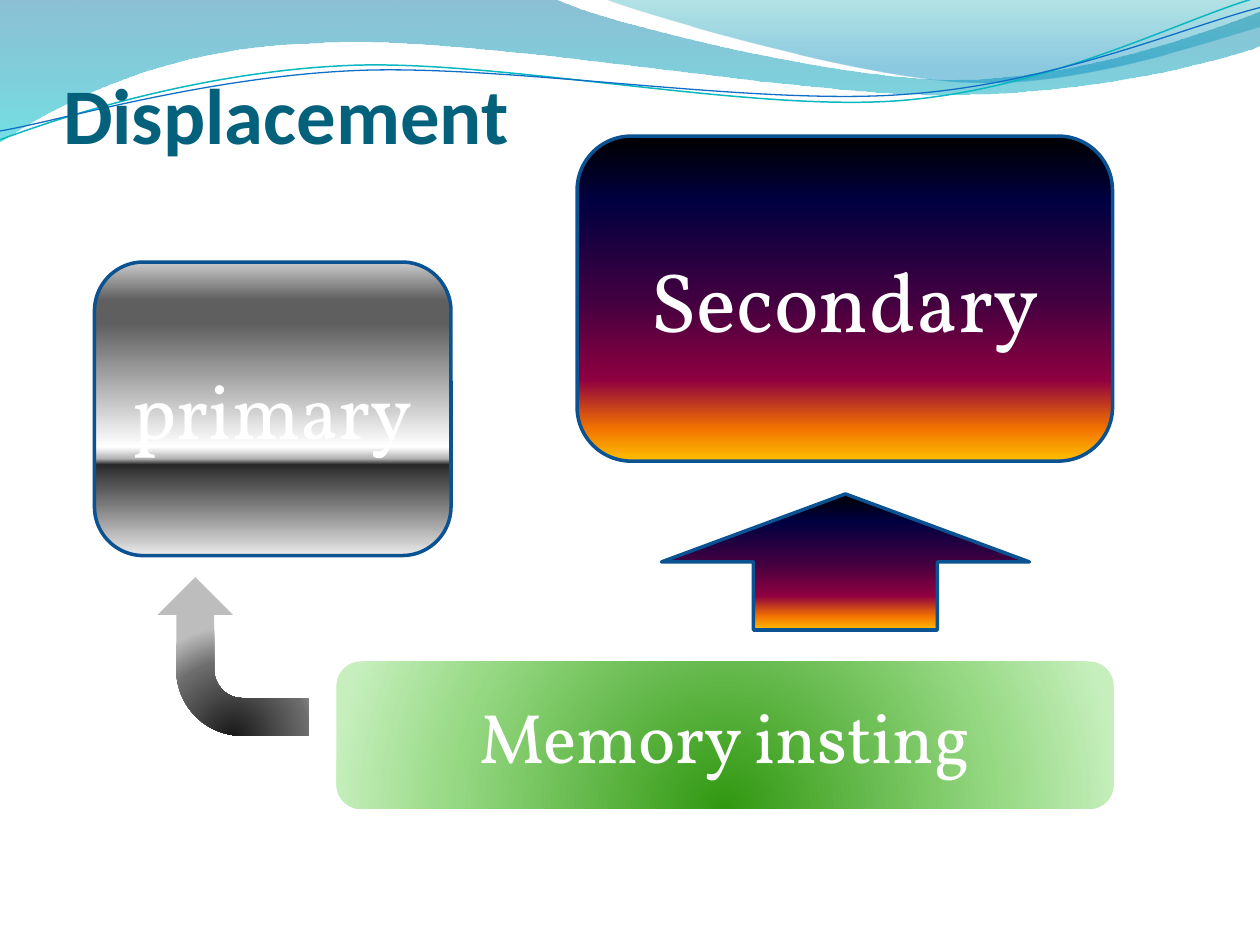
import pptx
import pptx.util
import pptx.dml.color
import pptx.enum.shapes
import pptx.enum.text
import pptx.oxml
from pptx.util import Inches, Pt

SHAPE = pptx.enum.shapes.MSO_SHAPE
NS = 'xmlns:a="http://schemas.openxmlformats.org/drawingml/2006/main"'

# Gradient stops: position %, colour, optional opacity %
FIRE = [(0, "000000"), (20, "000040"), (50, "400040"), (75, "8F0040"),
        (90, "F27300"), (100, "FFBF00")]
CHROME = [(0, "CBCBCB"), (13, "5F5F5F"), (21, "5F5F5F"), (63, "FFFFFF"),
          (67, "B2B2B2"), (69, "292929"), (82, "777777"), (100, "EAEAEA")]
GREEN = [(0, "319811"), (68, "95D882"), (100, "C6EFBD")]
GREY = [(0, "191919"), (68, "6C6C6C"), (100, "BDBDBD")]
BORDER = "0B5292"

# Two numbers are a straight segment, six are a Bézier curve
WAVES = [
    ([(0, 0), (4.4, -0.01), (4.76, 0.17, 6.64, 0.63, 7.58, 0.63),
      (8.53, 0.63, 9.58, 0.26, 10, 0.09), (10.01, 0.36),
      (9.83, 0.44, 8.7, 0.76, 7.46, 0.75), (6.22, 0.75, 3.82, 0.28, 2.57, 0.34),
      (1.29, 0.36, 0.46, 0.83, -0.01, 1.13)],
     [(0, "0074A1", 45), (100, "00C6CF", 55)]),
    ([(4.79, -0.01), (5.09, 0.11, 6.82, 0.62, 7.69, 0.65),
      (8.56, 0.69, 9.61, 0.32, 10, 0.21), (10, 0)],
     [(0, "00A1A9", 30), (80, "008BBF", 45)]),
]
STRANDS = [
    ([(0, 1.11), (0.48, 0.93, 1.58, 0.57, 2.77, 0.52),
      (3.95, 0.47, 5.93, 0.89, 7.13, 0.8), (8.33, 0.71, 9.38, 0.15, 9.98, -0.02)],
     "0AB8BF", 0.85),
    ([(0, 1.04), (0.47, 0.96, 1.64, 0.61, 2.83, 0.56),
      (4.03, 0.51, 5.97, 0.84, 7.17, 0.75), (8.36, 0.67, 9.41, 0.21, 10, 0.06)],
     "0F6FC6", 0.75),
]
# Kind, box, rotation, stops, border, text, text size
SHAPES = [
    (SHAPE.ROUNDED_RECTANGLE, (0.75, 2.08, 2.83, 2.33), 0, CHROME, BORDER, "primary", 44),
    (SHAPE.ROUNDED_RECTANGLE, (2.67, 5.25, 6.17, 1.17), 0, GREEN, None, "Memory insting", 40),
    (SHAPE.ROUNDED_RECTANGLE, (4.58, 1.08, 4.25, 2.58), 0, FIRE, BORDER, "Secondary", 48),
    (SHAPE.BENT_ARROW, (1.22, 4.61, 1.26, 1.2), 270, GREY, None, None, None),
    (SHAPE.UP_ARROW, (5.25, 3.92, 2.92, 1.08), 0, FIRE, BORDER, None, None),
]


def rgb(value):
    return pptx.dml.color.RGBColor.from_string(value)


def set_gradient(sp, stops, radial=False):
    gs = "".join(
        f'<a:gs pos="{pos * 1000}"><a:srgbClr val="{color}">'
        + "".join(f'<a:alpha val="{a * 1000}"/>' for a in alpha)
        + "</a:srgbClr></a:gs>" for pos, color, *alpha in stops)
    if radial:
        direction = ('<a:path path="circle"><a:fillToRect l="50000" t="130000" '
                     'r="50000" b="-30000"/></a:path>')
    else:
        direction = '<a:lin ang="5400000" scaled="0"/>'
    sp.fill.background()
    spPr = sp._element.spPr
    spPr.replace(spPr.find(pptx.oxml.ns.qn("a:noFill")), pptx.oxml.parse_xml(
        f'<a:gradFill {NS} rotWithShape="1"><a:gsLst>{gs}</a:gsLst>{direction}</a:gradFill>'))


def set_line(sp, color, width=2):
    if color:
        sp.line.color.rgb = rgb(color)
        sp.line.width = Pt(width)
    else:
        sp.line.fill.background()


def add_curve(s, outline, close):
    """Build the outline from its corner points, then bend the curved segments."""
    corners = [tuple(map(Inches, seg[-2:])) for seg in outline]
    builder = s.shapes.build_freeform(*corners[0], scale=1.0)
    builder.add_line_segments(corners[1:], close=close)
    sp = builder.convert_to_shape()
    sp.shadow.inherit = False
    lines = list(sp._element.iter(pptx.oxml.ns.qn("a:lnTo")))
    for line, seg in zip(lines, outline[1:]):
        if len(seg) == 6:
            pts = "".join(f'<a:pt x="{Inches(x) - sp.left}" y="{Inches(y) - sp.top}"/>'
                          for x, y in zip(seg[::2], seg[1::2]))
            line.getparent().replace(line, pptx.oxml.parse_xml(
                f"<a:cubicBezTo {NS}>{pts}</a:cubicBezTo>"))
    return sp


def style_text(p, size, font, color, align, bold=False):
    p.alignment = align
    for item in (p, *p.runs):
        f = item.font
        f.size, f.name, f.bold = Pt(size), font, bold
        f.color.rgb = rgb(color)


def main():
    prs = pptx.Presentation()
    prs.slide_width, prs.slide_height = Inches(10), Inches(7.5)
    s = prs.slides.add_slide(prs.slide_layouts[5])
    align, anchor = pptx.enum.text.PP_ALIGN, pptx.enum.text.MSO_ANCHOR

    for outline, stops in WAVES:
        sp = add_curve(s, outline, True)
        set_gradient(sp, stops)
        set_line(sp, None)
    for outline, color, width in STRANDS:
        sp = add_curve(s, outline, False)
        sp.fill.background()
        set_line(sp, color, width)

    title = s.shapes.title
    s.shapes._spTree.append(title._element)  # in front of the waves
    title.left, title.top, title.width, title.height = map(Inches, (0.5, 0.77, 9, 1.25))
    tf = title.text_frame
    tf.text = "Displacement \v"
    tf.auto_size = pptx.enum.text.MSO_AUTO_SIZE.NONE
    tf.vertical_anchor = anchor.BOTTOM
    tf.margin_left = tf.margin_right = tf.margin_bottom = 0
    style_text(tf.paragraphs[0], 45, "Calibri", "04617B", align.LEFT, True)

    for kind, box, rotation, stops, border, text, size in SHAPES:
        sp = s.shapes.add_shape(kind, *map(Inches, box))
        sp.rotation = rotation
        sp.shadow.inherit = False
        set_gradient(sp, stops, radial=border is None)
        set_line(sp, border)
        if text:
            tf = sp.text_frame
            tf.text = text
            tf.vertical_anchor = anchor.MIDDLE
            style_text(tf.paragraphs[0], size, "Vollkorn", "FFFFFF", align.CENTER)

    prs.save("out.pptx")


if __name__ == "__main__":
    main()
